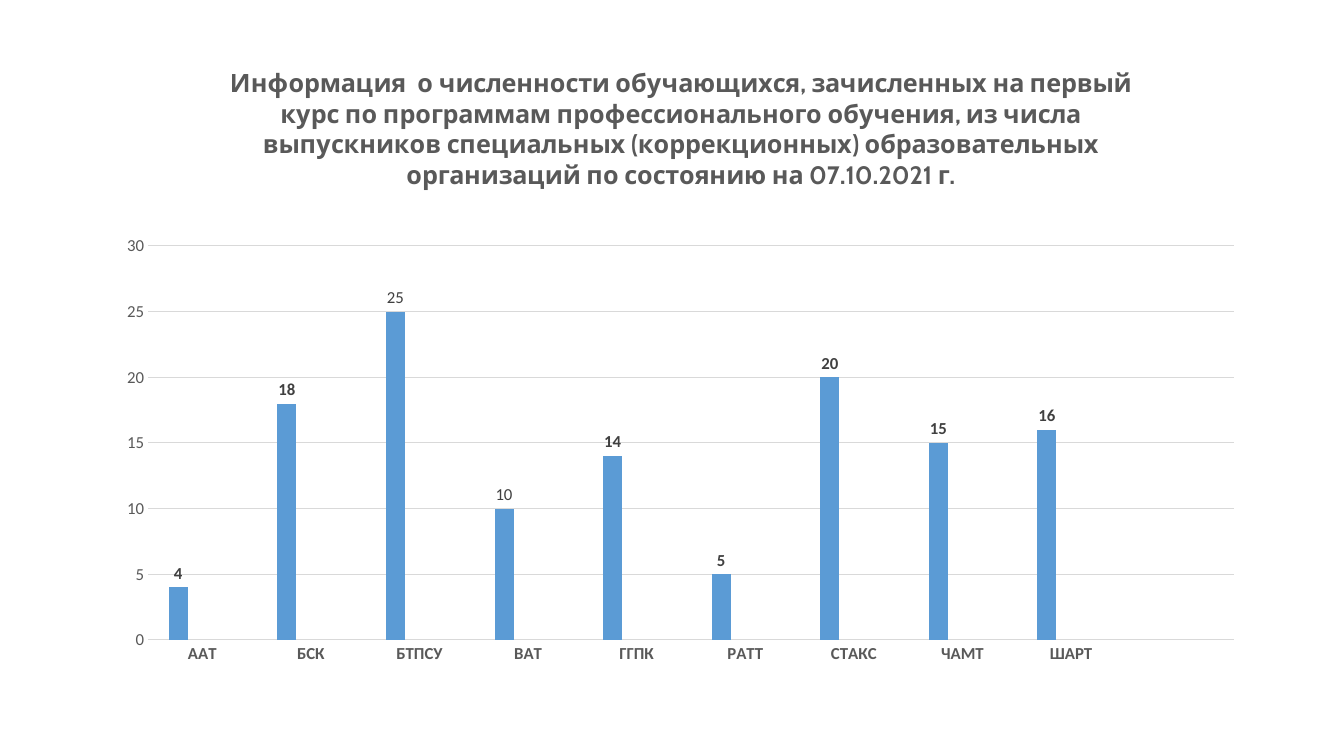
from dataclasses import dataclass

from lxml import etree
from pptx import Presentation
from pptx import util as u
from pptx.chart.data import CategoryChartData
from pptx.dml.color import RGBColor
from pptx.enum import chart as kinds
from pptx.enum import text as text_kinds
from pptx.oxml import ns

PX = u.Inches(1) / 100.8

TITLE = (
    "Информация  о численности обучающихся, зачисленных на первый курс "
    "по программам профессионального обучения, из числа выпускников "
    "специальных (коррекционных) образовательных организаций "
    "по состоянию на 07.10.2021 г."
)
ENROLLED = {
    "ААТ": 4, "БСК": 18, "БТПСУ": 25, "ВАТ": 10, "ГГПК": 14,
    "РАТТ": 5, "СТАКС": 20, "ЧАМТ": 15, "ШАРТ": 16, "": None,
}
REGULAR_LABELS = (2, 3)


@dataclass(frozen=True)
class Theme:
    background: str = "FFFFFF"
    text: str = "595959"
    label: str = "404040"
    line: str = "D9D9D9"
    series: tuple = ("5B9BD5", "ED7D31", "A5A5A5")
    title_font: str = "Cabin"
    body_font: str = "Calibri"
    title_size: int = 18
    body_size: int = 12
    line_width: float = 0.75


def px(length):
    return u.Emu(round(length * PX))


def set_font(font, name, size, color, bold=False):
    font.name = name
    font.size = u.Pt(size)
    font.bold = bold
    font.color.rgb = RGBColor.from_string(color)


def write_text(frame, content, align=text_kinds.PP_ALIGN.CENTER, **style):
    paragraph = frame.paragraphs[0]
    paragraph.alignment = align
    run = paragraph.add_run()
    run.text = content
    set_font(run.font, **style)


class SlideBuilder:
    """Draws styled elements on the current slide."""

    def __init__(self, presentation, theme):
        self.theme = theme
        self.slide = presentation.slides.add_slide(presentation.slide_layouts[6])
        fill = self.slide.background.fill
        fill.solid()
        fill.fore_color.rgb = RGBColor.from_string(theme.background)

    def body_style(self, color, bold=False):
        return dict(name=self.theme.body_font, size=self.theme.body_size,
                    color=color, bold=bold)

    def style_line(self, line):
        line.color.rgb = RGBColor.from_string(self.theme.line)
        line.width = u.Pt(self.theme.line_width)

    def style_axes(self, chart):
        for axis, bold in ((chart.category_axis, True), (chart.value_axis, False)):
            axis.major_tick_mark = kinds.XL_TICK_MARK.NONE
            axis.minor_tick_mark = kinds.XL_TICK_MARK.NONE
            set_font(axis.tick_labels.font, **self.body_style(self.theme.text, bold))
        self.style_line(chart.category_axis.format.line)
        values = chart.value_axis
        values.minimum_scale, values.maximum_scale, values.major_unit = 0, 30, 5
        values.format.line.fill.background()
        values.has_major_gridlines = True
        self.style_line(values.major_gridlines.format.line)

    def style_labels(self, series, regular):
        labels = series.data_labels
        labels.show_value = True
        labels.position = kinds.XL_LABEL_POSITION.OUTSIDE_END
        set_font(labels.font, **self.body_style(self.theme.label, True))
        for index in regular:
            label = series.points[index].data_label
            set_font(label.font, **self.body_style(self.theme.label))
            label.position = kinds.XL_LABEL_POSITION.OUTSIDE_END

    def place_plot(self, chart, frame, area):
        plot_area = chart.plots[0]._element.getparent()
        for old in plot_area.findall(ns.qn("c:layout")):
            plot_area.remove(old)
        layout = etree.Element(ns.qn("c:layout"))
        manual = etree.SubElement(layout, ns.qn("c:manualLayout"))
        left, top, width, height = frame
        settings = {
            "layoutTarget": "inner", "xMode": "edge", "yMode": "edge",
            "x": (area[0] - left) / width, "y": (area[1] - top) / height,
            "w": area[2] / width, "h": area[3] / height,
        }
        for name, value in settings.items():
            etree.SubElement(manual, ns.qn(f"c:{name}")).set("val", str(value))
        plot_area.insert(0, layout)

    def column_chart(self, title, values, frame, area, regular=()):
        data = CategoryChartData()
        data.categories = list(values)
        data.add_series("Series 1", list(values.values()))
        for number in (2, 3):
            data.add_series(f"Series {number}", [None] * len(values))
        chart = self.slide.shapes.add_chart(
            kinds.XL_CHART_TYPE.COLUMN_CLUSTERED, *map(px, frame), data).chart
        set_font(chart.font, **self.body_style(self.theme.text))
        chart.has_legend = False
        chart.has_title = True
        write_text(chart.chart_title.text_frame, title, name=self.theme.title_font,
                   size=self.theme.title_size, color=self.theme.text, bold=True)
        plot = chart.plots[0]
        plot.gap_width, plot.overlap = 219, -27
        plot.vary_by_categories = False
        for series, color in zip(plot.series, self.theme.series):
            series.format.fill.solid()
            series.format.fill.fore_color.rgb = RGBColor.from_string(color)
            series.invert_if_negative = False
        self.style_labels(plot.series[0], regular)
        self.style_axes(chart)
        self.place_plot(chart, frame, area)


def main():
    presentation = Presentation()
    presentation.slide_width = px(1344)
    presentation.slide_height = px(756)
    builder = SlideBuilder(presentation, Theme())
    builder.column_chart(TITLE, ENROLLED, frame=(104, 43, 1154, 634),
                         area=(148, 246, 1086, 394), regular=REGULAR_LABELS)
    presentation.save("out.pptx")


if __name__ == "__main__":
    main()
